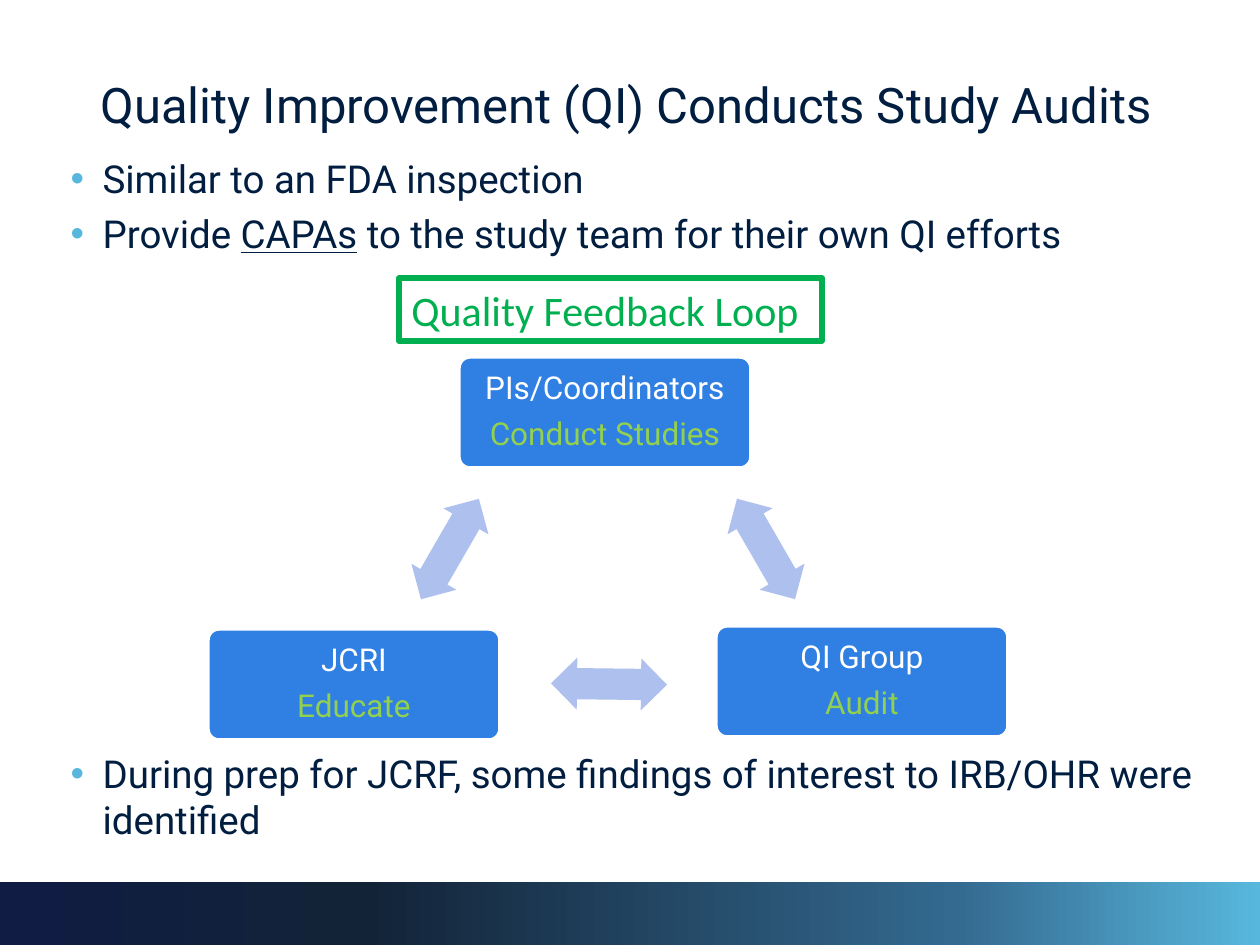
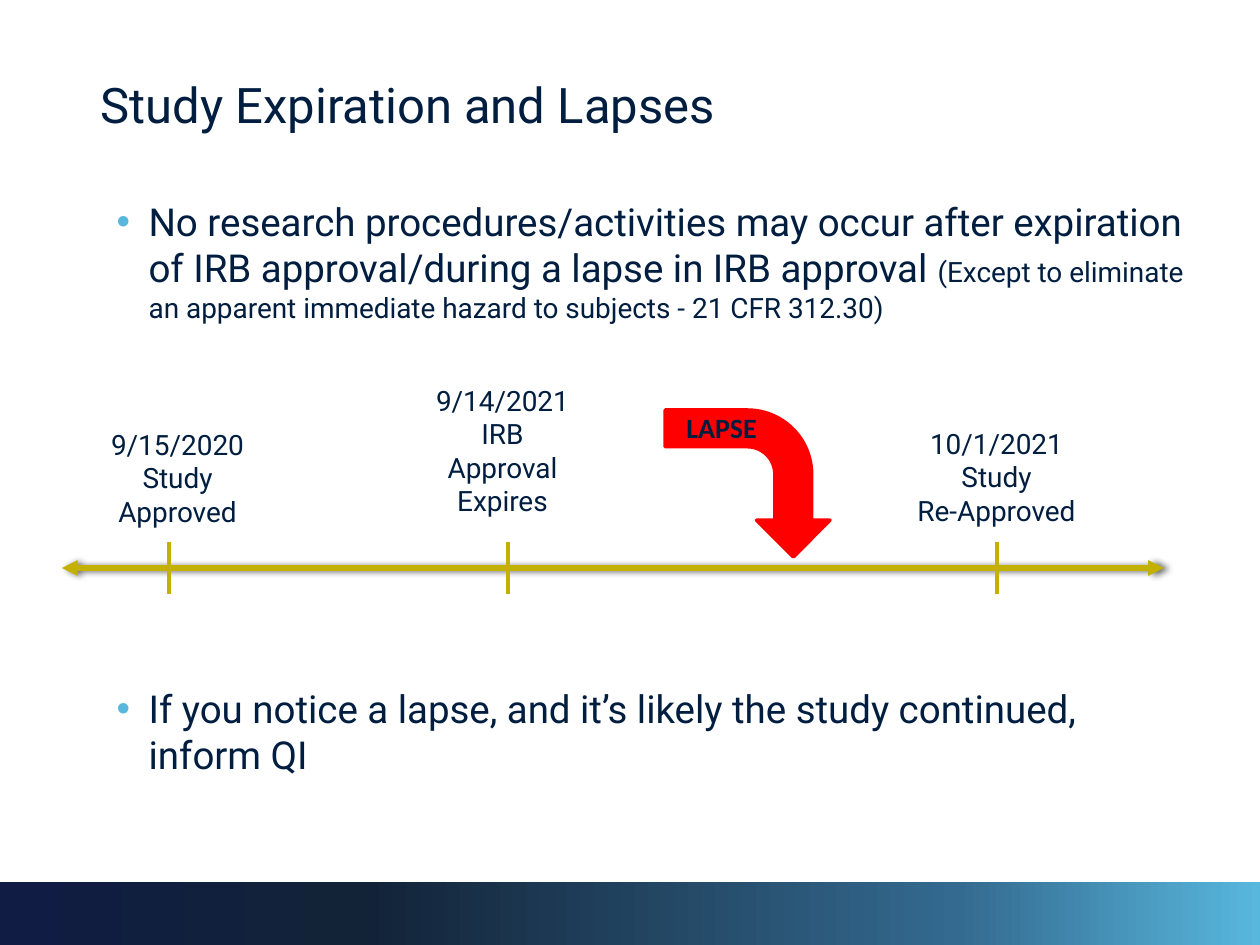
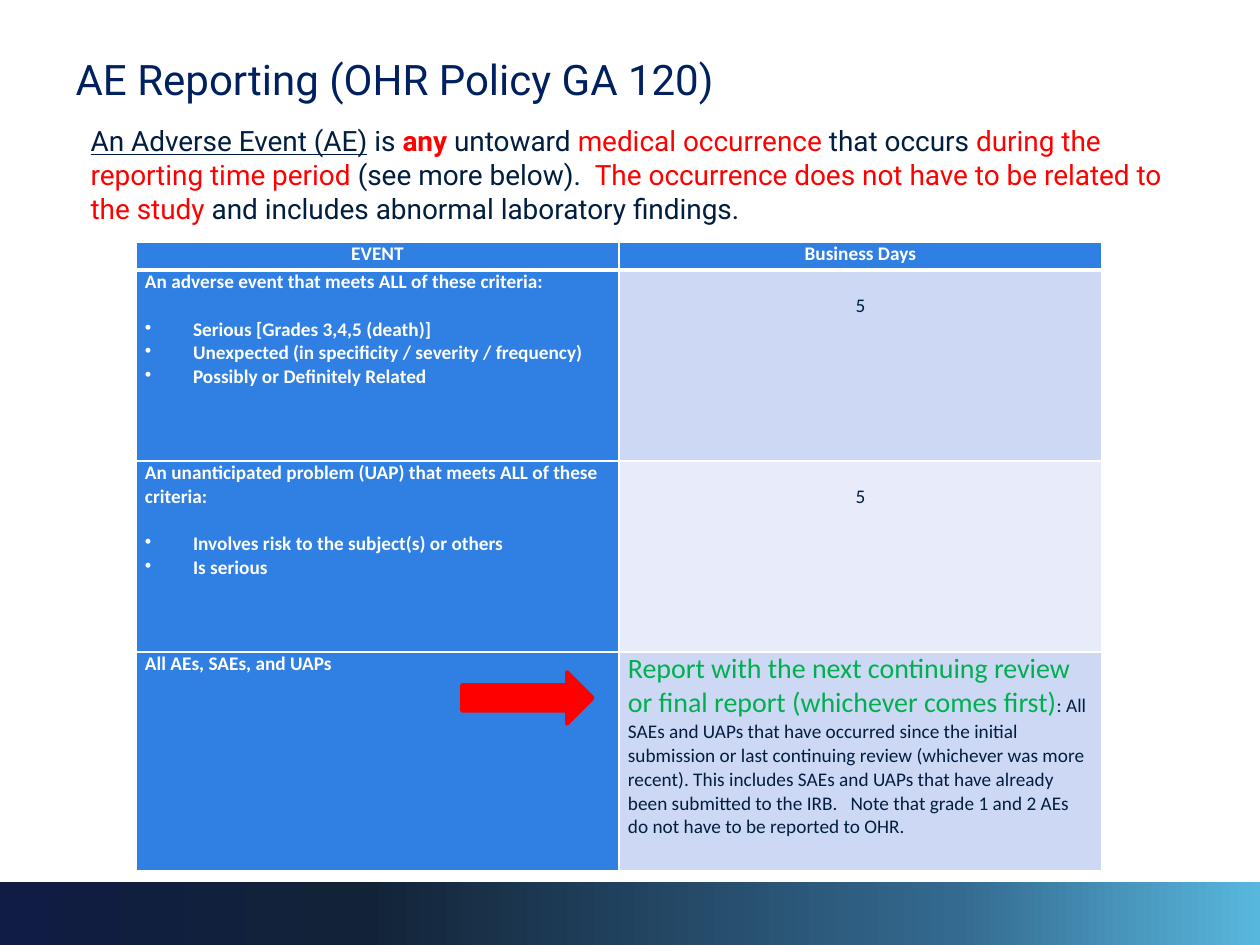
import pptx
import pptx.util
import pptx.dml.color
import pptx.enum.shapes
import pptx.enum.text
import pptx.oxml
import pptx.oxml.ns

SHAPE = pptx.enum.shapes.MSO_SHAPE
ALIGN = pptx.enum.text.PP_ALIGN
ANCHOR = pptx.enum.text.MSO_ANCHOR
qn = pptx.oxml.ns.qn
NS = pptx.oxml.ns.nsdecls("a")

COLORS = {
    "navy": "011E40", "title_blue": "002060", "sky": "58B7DD", "steel": "346A90",
    "ink": "122338", "indigo": "101C43", "white": "FFFFFF", "blue": "307FE2",
    "lavender": "AEC0EE", "lime": "92D050", "green": "00B050", "red": "FF0000",
    "gold": "C4B000", "row_dark": "CDD8F4", "row_light": "E8ECFA",
}
BAND_STOPS = [(0, "sky"), (24, "steel"), (71, "ink"), (100, "indigo")]
HANG = (48, -32)
PX_PER_INCH = 126


def px(n):
    return pptx.util.Emu(round(n * 914400 / PX_PER_INCH))


def rgb(name):
    return pptx.dml.color.RGBColor.from_string(COLORS[name])


def xml(tag, inner="", attrs=""):
    return pptx.oxml.parse_xml(f"<a:{tag} {NS} {attrs}>{inner}</a:{tag}>")


def color_xml(name, inner=""):
    return f'<a:srgbClr val="{COLORS[name]}">{inner}</a:srgbClr>'


def write(tf, text, align=ALIGN.LEFT, before=0, spacing=None, indent=None, bullet=None, **fmt):
    """Add a paragraph; text is a string or a list of (string, format changes)."""
    p = tf.paragraphs[0]
    if p.runs:
        p = tf.add_paragraph()
    p.alignment = align
    pPr = p._p.get_or_add_pPr()
    if indent:
        pPr.set("marL", str(px(indent[0])))
        pPr.set("indent", str(px(indent[1])))
    if bullet:
        pPr.append(xml("buClr", color_xml(bullet)))
        pPr.append(xml("buChar", attrs='char="•"'))
    else:
        pPr.append(xml("buNone"))
    p.space_before = px(before)
    if spacing:
        p.line_spacing = spacing
    for part, changes in [(text, {})] if isinstance(text, str) else text:
        style = {"size": 16, "color": "navy", "font": "Roboto", **fmt, **changes}
        r = p.add_run()
        r.text = part
        r.font.name = style["font"]
        r.font.size = pptx.util.Pt(style["size"])
        r.font.color.rgb = rgb(style["color"])
        r.font.bold = style.get("bold", False)
        r.font.underline = style.get("underline", False)


def place(sp, x, y, w, h):
    sp.left, sp.top, sp.width, sp.height = px(x), px(y), px(w), px(h)


def add_shape(s, kind, x, y, w, h, fill=None, line=None, line_pt=2, rotation=0, adjust=()):
    sp = s.shapes.add_shape(kind, px(x), px(y), px(w), px(h))
    sp.shadow.inherit = False
    sp.rotation = rotation
    for i, value in enumerate(adjust):
        sp.adjustments[i] = value
    if fill:
        sp.fill.solid()
        sp.fill.fore_color.rgb = rgb(fill)
    else:
        sp.fill.background()
    if line:
        sp.line.color.rgb = rgb(line)
        sp.line.width = pptx.util.Pt(line_pt)
    else:
        sp.line.fill.background()
    return sp


def add_textbox(s, x, y, w, h):
    tf = s.shapes.add_textbox(px(x), px(y), px(w), px(h)).text_frame
    tf.word_wrap = True
    return tf


def add_line(s, x1, y1, x2, y2, width, effect=""):
    line = s.shapes.add_connector(
        pptx.enum.shapes.MSO_CONNECTOR.STRAIGHT, px(x1), px(y1), px(x2), px(y2))
    line.line.color.rgb = rgb("gold")
    line.line.width = pptx.util.Pt(width)
    line.element.spPr.append(xml("effectLst", effect))
    return line


def add_band(prs, s):
    """Draw the footer band and move it to the master, so every slide shows it."""
    band = add_shape(s, SHAPE.RECTANGLE, 0, 882, 1260, 63)
    band.fill.gradient()
    band.fill.gradient_angle = 180
    stops = next(band.element.iter(qn("a:gsLst")))
    stops.clear()
    for position, name in BAND_STOPS:
        stops.append(xml("gs", color_xml(name), f'pos="{position * 1000}"'))
    tree = prs.slide_master.shapes[0].element.getparent()
    tree.insert(2, band.element)


def add_slide(prs, title, body_box, body_top=8, title_box=(88, 63, 1111, 84), **title_fmt):
    """Add a slide with its title; return it with the body's text frame."""
    s = prs.slides.add_slide(prs.slide_layouts[1])
    body = s.placeholders[1]
    for sp, box, top in ((s.shapes.title, title_box, 11), (body, body_box, body_top)):
        place(sp, *box)
        tf = sp.text_frame
        tf.word_wrap = True
        tf.auto_size = pptx.enum.text.MSO_AUTO_SIZE.NONE
        tf.vertical_anchor = ANCHOR.TOP
        tf.margin_top = px(top)
    write(s.shapes.title.text_frame, title, **{"size": 28, **title_fmt})
    return s, body.text_frame


def feedback_loop(s, x, y):
    label = add_shape(s, SHAPE.RECTANGLE, x + 191, y, 423, 63, line="green", line_pt=3)
    write(label.text_frame, "Quality Feedback Loop", size=24, font="Calibri", color="green")
    for dx, dy, who, task in (
        (251, 79, "PIs/Coordinators", "Conduct Studies"),
        (508, 348, "QI Group", "Audit"),
        (0, 351, "JCRI", "Educate"),
    ):
        box = add_shape(s, SHAPE.ROUNDED_RECTANGLE, x + dx, y + dy, 292, 111,
                        fill="blue", line="white", adjust=[0.1])
        tf = box.text_frame
        tf.word_wrap = True
        tf.vertical_anchor = ANCHOR.MIDDLE
        for text, color, before in ((who, "white", 0), (task, "lime", 12)):
            write(tf, text, ALIGN.CENTER, before, 0.9, size=18, color=color)
    for dx, dy, angle in ((500, 245, 60), (184, 245, 300), (343, 380, 180.7)):
        add_shape(s, SHAPE.LEFT_RIGHT_ARROW, x + dx, y + dy, 116, 52,
                  fill="lavender", rotation=angle, adjust=[0.6, 0.5])


def timeline(s, x, y):
    for dx, dy, w, h, lines in (
        (31, 44, 169, 115, ["9/15/2020", "Study Approved"]),
        (361, 0, 159, 149, ["9/14/2021", "IRB", "Approval Expires"]),
        (838, 43, 193, 115, ["10/1/2021", "Study", "Re-Approved"]),
    ):
        tf = add_textbox(s, x + dx, y + dy, w, h)
        for text in lines:
            write(tf, text, ALIGN.CENTER)
    shadow = ('<a:outerShdw blurRad="50800" dist="25400" dir="0">'
              + color_xml("black", '<a:alpha val="60000"/>') + "</a:outerShdw>")
    axis = add_line(s, x, y + 191, x + 1102, y + 191, 3, shadow)
    for end in ("headEnd", "tailEnd"):
        axis.line._get_or_add_ln().append(xml(end, attrs='type="arrow"'.replace("arrow", "triangle")))
    for dx in (107, 446, 935):
        add_line(s, x + dx, y + 165, x + dx, y + 217, 2)
    add_shape(s, SHAPE.BENT_ARROW, x + 612, y + 24, 147, 165,
              fill="red", line="red", rotation=90)
    write(add_textbox(s, x + 612, y + 27, 116, 47), "LAPSE", font="Calibri", bold=True)


def format_cell(cell, fill, bottom=1, top=1):
    cell.fill.solid()
    cell.fill.fore_color.rgb = rgb(fill)
    cell.margin_left = cell.margin_right = px(9)
    cell.margin_top = cell.margin_bottom = 0
    tcPr = cell._tc.get_or_add_tcPr()
    widths = {"lnL": 1, "lnR": 1, "lnT": top, "lnB": bottom}
    for i, (side, width) in enumerate(widths.items()):
        solid = f"<a:solidFill>{color_xml('white')}</a:solidFill>"
        tcPr.insert(i, xml(side, solid, f'w="{width * 12700}"'))


def reporting_table(s, x, y):
    heights = (28, 191, 191, 219)
    frame = s.shapes.add_table(4, 2, px(x), px(y), px(966), px(sum(heights)))
    table = frame.table
    table.first_row = table.horz_banding = False
    for column in table.columns:
        column.width = px(483)
    for row, height in zip(table.rows, heights):
        row.height = px(height)
    head = {"size": 11, "font": "Calibri", "color": "white", "bold": True}
    plain = {"size": 11, "font": "Calibri"}

    for i, text in enumerate(("EVENT", "Business Days")):
        cell = table.cell(0, i)
        format_cell(cell, "blue", bottom=3)
        write(cell.text_frame, text, ALIGN.CENTER, **head)
    events = (
        ("An adverse event that meets ALL of these criteria:",
         ["Serious [Grades 3,4,5 (death)]",
          "Unexpected (in specificity / severity / frequency)",
          "Possibly or Definitely Related"]),
        ("An unanticipated problem (UAP) that meets ALL of these criteria:",
         ["Involves risk to the subject(s) or others", "Is serious"]),
        ("All AEs, SAEs, and UAPs", []),
    )
    for i, (event, criteria) in enumerate(events, 1):
        top = 3 if i == 1 else 1
        cell, days = table.cell(i, 0), table.cell(i, 1)
        format_cell(cell, "blue", top=top)
        format_cell(days, "row_dark" if i % 2 else "row_light", top=top)
        write(cell.text_frame, event, **head)
        for j, text in enumerate(criteria):
            write(cell.text_frame, text, before=0 if j else 24,
                  indent=(48, -48), bullet="white", **head)
        if criteria:
            days.margin_top = px(24)
            write(days.text_frame, "5", ALIGN.CENTER, **plain)
    write(table.cell(3, 1).text_frame, [
        ("Report with the next continuing review or final report (whichever comes first)",
         {"size": 16, "color": "green"}),
        (": All SAEs and UAPs that have occurred since the initial submission or last "
         "continuing review (whichever was more recent). This includes SAEs and UAPs that "
         "have already been submitted to the IRB.   Note that grade 1 and 2 AEs do not have "
         "to be reported to OHR.", {}),
    ], **plain)
    add_shape(s, SHAPE.RIGHT_ARROW, x + 326, y + 430, 131, 52, fill="red", line="red")


def audits_slide(prs):
    s, tf = add_slide(prs, "Quality Improvement (QI) Conducts Study Audits",
                      (42, 147, 1187, 725))
    bullet = {"indent": HANG, "bullet": "sky", "size": 22}
    write(tf, "Similar to an FDA inspection", **bullet)
    write(tf, [("Provide ", {}), ("CAPAs", {"underline": True}),
               (" to the study team for their own QI efforts", {})], before=9, **bullet)
    write(tf, "During prep for JCRF, some findings of interest to IRB/OHR were identified",
          before=494, **bullet)
    feedback_loop(s, 208, 278)
    return s


def lapses_slide(prs):
    s, tf = add_slide(prs, "Study Expiration and Lapses", (88, 136, 1111, 746), body_top=62)
    bullet = {"indent": HANG, "bullet": "sky", "size": 22}
    write(tf, [("No research procedures/activities may occur after expiration of IRB "
                "approval/during a lapse in IRB approval ", {}),
               ("(Except to eliminate an apparent immediate hazard to subjects - "
                "21 CFR 312.30)", {"size": 16})], **bullet)
    write(tf, "If you notice a lapse, and it’s likely the study continued, inform QI",
          before=361, **bullet)
    timeline(s, 62, 377)


def reporting_slide(prs):
    s, tf = add_slide(prs, "AE Reporting (OHR Policy GA 120)", (63, 116, 1134, 777),
                      title_box=(63, 42, 1134, 103), size=24, color="title_blue")
    red = {"color": "red"}
    write(tf, [
        ("An Adverse Event (AE)", {"underline": True}), (" is ", {}),
        ("any", {"color": "red", "bold": True}), (" untoward ", {}),
        ("medical occurrence", red), (" that occurs ", {}),
        ("during the reporting time period", red), (" (see more below).  ", {}),
        ("The occurrence does not have to be related to the study ", red),
        ("and includes abnormal laboratory findings.", {}),
    ], indent=(15, 0))
    reporting_table(s, 136, 242)


def main():
    prs = pptx.Presentation()
    prs.slide_width, prs.slide_height = px(1260), px(945)
    COLORS["black"] = "000000"
    add_band(prs, audits_slide(prs))
    lapses_slide(prs)
    reporting_slide(prs)
    prs.save("out.pptx")


if __name__ == "__main__":
    main()
